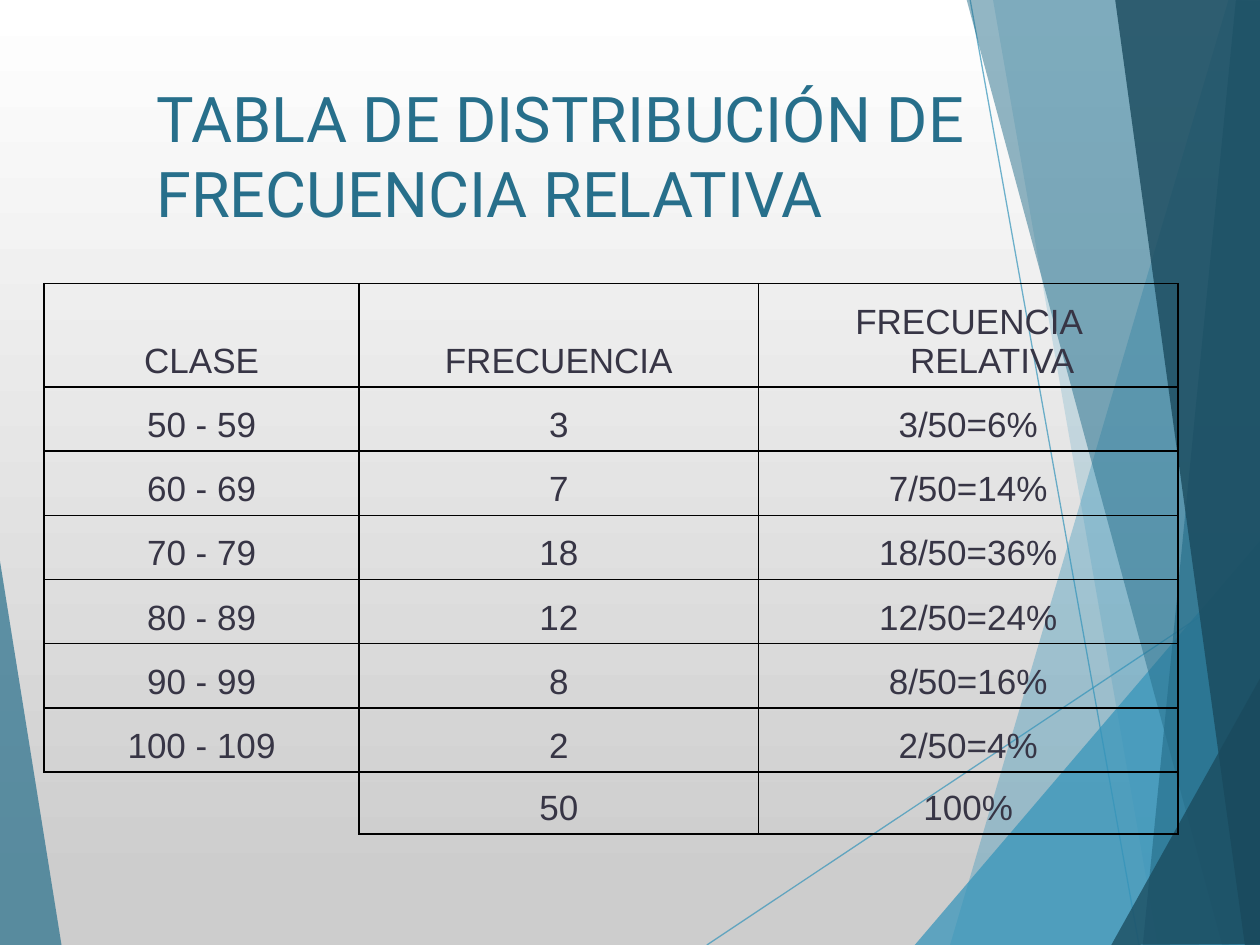
from lxml import etree
from pptx import Presentation
from pptx.dml.color import RGBColor
from pptx.enum.shapes import MSO_CONNECTOR
from pptx.enum.text import MSO_ANCHOR, MSO_AUTO_SIZE, PP_ALIGN
from pptx.oxml.ns import qn
from pptx.util import Inches, Pt

STRAIGHT = MSO_CONNECTOR.STRAIGHT
MIDDLE, BOTTOM = MSO_ANCHOR.MIDDLE, MSO_ANCHOR.BOTTOM
LEFT, CENTER = PP_ALIGN.LEFT, PP_ALIGN.CENTER
NO_AUTOFIT = MSO_AUTO_SIZE.NONE

BLUE, TEAL, NAVY = "3494BA", "276F8B", "1A4A5D"
INK, BLACK = "373545", "000000"

RAYS = [((5.61, 7.5), (10.01, 4.57)), ((7.7, 0), (9.04, 7.5))]
FACETS = [
    (BLUE, 36, [(9.75, 0), (7.54, 7.5), (10.02, 7.51), (10.01, 0.01)]),
    (BLUE, 20, [(7.88, -0.01), (9.19, 7.5), (10.01, 7.5), (10.01, -0.01)]),
    (BLUE, 72, [(7.26, 7.5), (10, 4.29), (10.01, 7.5)]),
    (TEAL, 50, [(7.67, -0.01), (9.7, 7.5), (10.01, 7.49), (10.01, -0.01)]),
    (TEAL, 66, [(9.81, -0.01), (9.07, 7.5), (10.01, 7.5), (10, -0.01)]),
    (NAVY, 80, [(8.85, -0.01), (9.88, 7.5), (10.02, 7.5), (10, -0.01)]),
    (NAVY, 76, [(8.82, 7.5), (10.02, 5.35), (10.02, 7.49)]),
    (TEAL, 70, [(-0.01, 4.39), (0.49, 7.51), (-0.01, 7.5)]),
]
COLUMN_WIDTHS = [2.5, 3.17, 3.33]
ROW_HEIGHTS = [0.82] + [0.51] * 6 + [0.49]
ROWS = [
    ("CLASE", "FRECUENCIA", "FRECUENCIA RELATIVA"),
    ("50 - 59", "3", "3/50=6%"),
    ("60 - 69", "7", "7/50=14%"),
    ("70 - 79", "18", "18/50=36%"),
    ("80 - 89", "12", "12/50=24%"),
    ("90 - 99", "8", "8/50=16%"),
    ("100 - 109", "2", "2/50=4%"),
    ("", "50", "100%"),
]


def rgb(value):
    return RGBColor.from_string(value)


def set_alpha(element, percent):
    color = next(element.iter(qn("a:srgbClr")))
    etree.SubElement(color, qn("a:alpha"), val=str(percent * 1000))


def add_run(p, text, size, font, color):
    r = p.add_run()
    r.text = text
    r.font.size = Pt(size)
    r.font.name = font
    r.font.color.rgb = rgb(color)


def set_background(s):
    fill = s.background.fill
    fill.gradient()
    fill.gradient_angle = 270
    for stop, position, color in zip(fill.gradient_stops, (0, 0.94), ("FFFFFF", "CDCDCD")):
        stop.position = position
        stop.color.rgb = rgb(color)


def add_ray(s, start, end):
    line = s.shapes.add_connector(STRAIGHT, *map(Inches, start + end))
    line.line.color.rgb = rgb(BLUE)
    line.line.width = Pt(0.75)
    sp_pr = line.element.spPr
    set_alpha(sp_pr, 70)
    etree.SubElement(sp_pr, qn("a:effectLst"))


def add_facet(s, color, alpha, points):
    corners = [(Inches(x), Inches(y)) for x, y in points]
    builder = s.shapes.build_freeform(*corners[0])
    builder.add_line_segments(corners[1:], close=True)
    sp = builder.convert_to_shape()
    sp.shadow.inherit = False
    sp.fill.solid()
    sp.fill.fore_color.rgb = rgb(color)
    set_alpha(sp.element.spPr, alpha)
    sp.line.fill.background()


def add_title(s, text):
    sp = s.shapes.title
    s.shapes.element.append(sp.element)
    sp.left, sp.top = Inches(1.14), Inches(0.52)
    sp.width, sp.height = Inches(7.67), Inches(1.42)
    tf = sp.text_frame
    tf.word_wrap = True
    tf.auto_size = NO_AUTOFIT
    tf.vertical_anchor = MIDDLE
    p = tf.paragraphs[0]
    p.alignment = LEFT
    add_run(p, text, 36, "Roboto", TEAL)


def set_borders(cell, visible):
    tc_pr = cell._tc.get_or_add_tcPr()
    for side in "LRTB":
        ln = etree.SubElement(tc_pr, qn(f"a:ln{side}"), w=str(Pt(1)))
        if side in visible:
            fill = etree.SubElement(ln, qn("a:solidFill"))
            etree.SubElement(fill, qn("a:srgbClr"), val=BLACK)
        else:
            etree.SubElement(ln, qn("a:noFill"))


def fill_cell(cell, text):
    set_borders(cell, "LRTB" if text else "RT")
    cell.fill.background()
    cell.vertical_anchor = BOTTOM
    if not text:
        return
    p = cell.text_frame.paragraphs[0]
    p.alignment = CENTER
    p_pr = p._p.get_or_add_pPr()
    p_pr.set("marL", str(Inches(0.38)))
    p_pr.set("indent", str(Inches(-0.38)))
    add_run(p, text, 20, "Arial", INK)


def add_frequency_table(s):
    frame = s.shapes.add_table(
        len(ROWS), len(COLUMN_WIDTHS), Inches(0.35), Inches(2.25),
        Inches(sum(COLUMN_WIDTHS)), Inches(sum(ROW_HEIGHTS)))
    table = frame.table
    table.first_row = False
    table.horz_banding = False
    for column, width in zip(table.columns, COLUMN_WIDTHS):
        column.width = Inches(width)
    for row, height, texts in zip(table.rows, ROW_HEIGHTS, ROWS):
        row.height = Inches(height)
        for cell, text in zip(row.cells, texts):
            fill_cell(cell, text)


def main():
    prs = Presentation()
    prs.slide_width, prs.slide_height = Inches(10), Inches(7.5)
    s = prs.slides.add_slide(prs.slide_layouts[5])
    set_background(s)
    for start, end in RAYS:
        add_ray(s, start, end)
    for color, alpha, points in FACETS:
        add_facet(s, color, alpha, points)
    add_title(s, "TABLA DE DISTRIBUCIÓN DE FRECUENCIA RELATIVA")
    add_frequency_table(s)
    prs.save("out.pptx")


if __name__ == "__main__":
    main()
